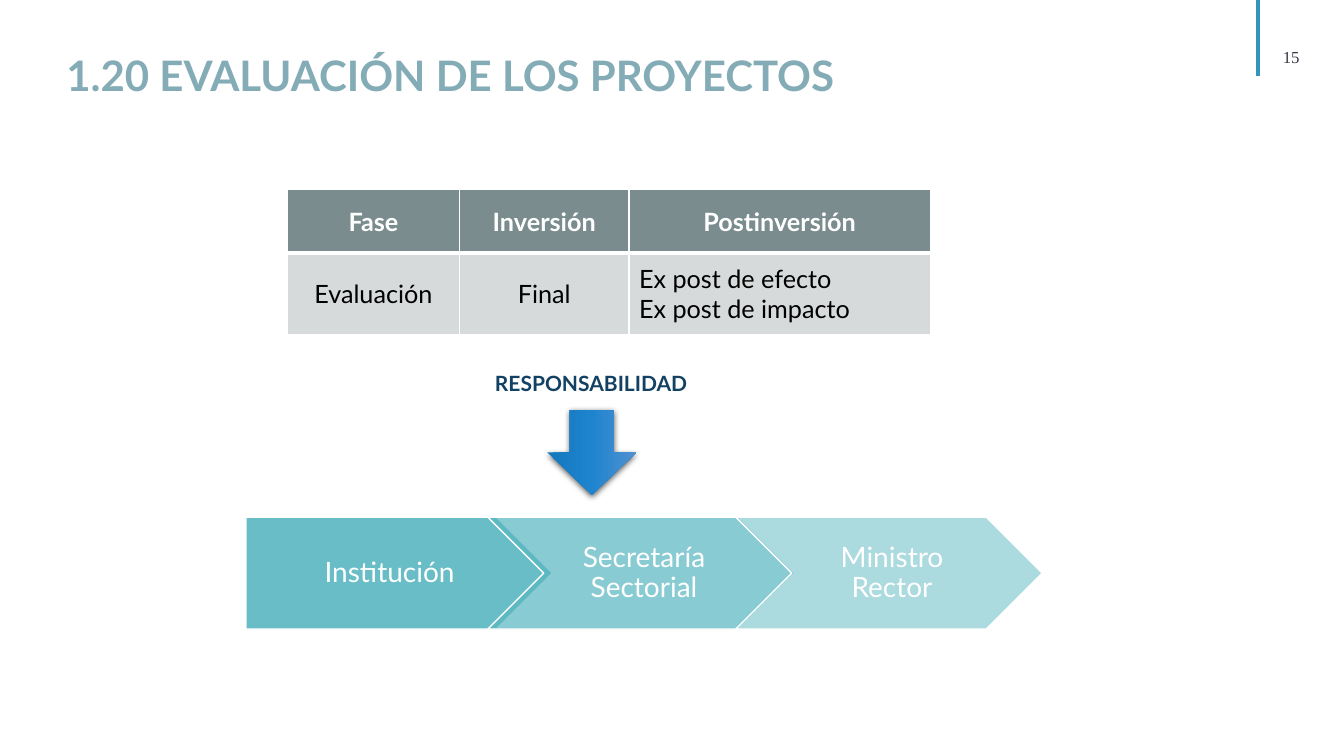
import pptx
import pptx.dml.color
import pptx.enum.shapes
import pptx.enum.text
import pptx.oxml.ns
import pptx.util
from lxml import etree

Pt = pptx.util.Pt
SHAPE = pptx.enum.shapes.MSO_SHAPE
ALIGN = pptx.enum.text.PP_ALIGN
ANCHOR = pptx.enum.text.MSO_ANCHOR
qn = pptx.oxml.ns.qn

COLOURS = {
    "title": "84ACB6", "number": "373545", "rule": "3494BA",
    "header": "7A8C8E", "body": "D7DADB", "step": "58B6C0",
    "label": "134163", "white": "FFFFFF", "black": "000000",
    "arrow_dark": "1477BE", "arrow_mid": "1E84CE", "arrow_light": "5191D0",
}


def rgb(name):
    return pptx.dml.color.RGBColor.from_string(COLOURS[name])


def add_colour(parent, name, alpha=None):
    colour = etree.SubElement(parent, qn("a:srgbClr"), val=COLOURS[name])
    if alpha is not None:
        etree.SubElement(colour, qn("a:alpha"), val=str(alpha * 1000))


def write(frame, lines, size, colour, bold=False, align=ALIGN.LEFT,
          font="Lato", spacing=None):
    frame.word_wrap = True
    for index, line in enumerate(lines):
        para = frame.paragraphs[0] if index == 0 else frame.add_paragraph()
        para.alignment = align
        if spacing:
            para.line_spacing = spacing
        span = para.add_run()
        span.text = line
        span.font.name = font
        span.font.size = Pt(size)
        span.font.bold = bold
        span.font.color.rgb = rgb(colour)


def set_margins(frame, left, top, right, bottom):
    frame.margin_left, frame.margin_top = Pt(left), Pt(top)
    frame.margin_right, frame.margin_bottom = Pt(right), Pt(bottom)


def add_text(page, place, text, size, colour, margins=(7.2, 3.6, 7.2, 3.6),
             anchor=ANCHOR.TOP, **style):
    frame = page.shapes.add_textbox(*map(Pt, place)).text_frame
    set_margins(frame, *margins)
    frame.vertical_anchor = anchor
    write(frame, [text], size, colour, **style)


def add_rule(page, x, bottom):
    rule = page.shapes.add_connector(
        pptx.enum.shapes.MSO_CONNECTOR.STRAIGHT, Pt(x), Pt(0), Pt(x), Pt(bottom))
    rule.line.color.rgb = rgb("rule")
    rule.line.width = Pt(2.25)
    etree.SubElement(rule._element.spPr, qn("a:effectLst"))


def add_step(page, kind, left, text, alpha, left_margin):
    step = page.shapes.add_shape(kind, Pt(left), Pt(369.4), Pt(218.9), Pt(79.9))
    step.shadow.inherit = False
    step.fill.solid()
    step.fill.fore_color.rgb = rgb("step")
    fill_colour = step._element.spPr.find(qn("a:solidFill"))[0]
    etree.SubElement(fill_colour, qn("a:alpha"), val=str(alpha * 1000))
    step.line.color.rgb = rgb("white")
    step.line.width = Pt(1)
    set_margins(step.text_frame, left_margin, 4.3, 2.2, 4.3)
    step.text_frame.vertical_anchor = ANCHOR.MIDDLE
    write(step.text_frame, [text], 20, "white", align=ALIGN.CENTER, spacing=0.9)


def add_arrow(page, place):
    arrow = page.shapes.add_shape(SHAPE.DOWN_ARROW, *map(Pt, place))
    arrow.line.fill.background()
    # Left-to-right gradient
    arrow.fill.gradient()
    arrow.fill.gradient_angle = 0
    stops = arrow._element.spPr.find(qn("a:gradFill")).find(qn("a:gsLst"))
    for stop in list(stops):
        stops.remove(stop)
    for percent, name in ((0, "arrow_dark"), (50, "arrow_mid"), (100, "arrow_light")):
        stop = etree.SubElement(stops, qn("a:gs"), pos=str(percent * 1000))
        add_colour(stop, name)
    # Soft shadow below
    arrow.shadow.inherit = False
    effects = arrow._element.spPr.find(qn("a:effectLst"))
    shadow = etree.SubElement(
        effects, qn("a:outerShdw"), blurRad=str(Pt(4.5)), dist=str(Pt(1.5)),
        dir="5400000", algn="ctr", rotWithShape="0")
    add_colour(shadow, "black", 63)


def add_borders(cell, widths):
    properties = cell._tc.get_or_add_tcPr()
    for side, width in widths.items():
        border = etree.SubElement(properties, qn("a:ln" + side), w=str(Pt(width)))
        add_colour(etree.SubElement(border, qn("a:solidFill")), "white")


def add_phase_table(page, rows, place, widths, heights):
    table = page.shapes.add_table(len(rows), len(widths), *map(Pt, place)).table
    for column, width in zip(table.columns, widths):
        column.width = Pt(width)
    for row, height in zip(table.rows, heights):
        row.height = Pt(height)
    for r, row in enumerate(rows):
        header = r == 0
        for c, lines in enumerate(row):
            cell = table.cell(r, c)
            add_borders(cell, {"L": 1, "R": 1, "T": 1 if header else 3,
                               "B": 3 if header else 1})
            cell.fill.solid()
            cell.fill.fore_color.rgb = rgb("header" if header else "body")
            cell.vertical_anchor = ANCHOR.MIDDLE
            write(cell.text_frame, lines, 18, "white" if header else "black",
                  bold=header,
                  align=ALIGN.CENTER if len(lines) == 1 else ALIGN.LEFT)


def main():
    deck = pptx.Presentation()
    deck.slide_width, deck.slide_height = Pt(960), Pt(540)
    page = deck.slides.add_slide(deck.slide_layouts[6])

    # Page number and title
    add_text(page, (893.5, 33.1, 57.6, 14.4), "15", 12, "number",
             margins=(7.2, 0, 7.2, 0), align=ALIGN.CENTER, font="Times New Roman")
    add_rule(page, 898.6, 54)
    add_text(page, (40.3, 31.7, 592.6, 43.9), "1.20 EVALUACIÓN DE LOS PROYECTOS",
             30, "title", bold=True)

    # Chain of responsibility
    add_step(page, SHAPE.PENTAGON, 175.7, "Institución", 90, 8.6)
    add_step(page, SHAPE.CHEVRON, 348.5, "Secretaría Sectorial", 70, 6.5)
    add_step(page, SHAPE.CHEVRON, 525.6, "Ministro Rector", 50, 6.5)

    # Evaluation by phase
    rows = [
        [["Fase"], ["Inversión"], ["Postinversión"]],
        [["Evaluación"], ["Final"], ["Ex post de efecto", "Ex post de impacto"]],
    ]
    add_phase_table(page, rows, (205.2, 135.4, 459.4, 103.7),
                    (123.1, 121, 215.3), (45.4, 58.3))

    # Label and arrow to the chain
    add_arrow(page, (391, 293, 63.4, 60.5))
    add_text(page, (336.2, 252, 172.1, 46.1), "RESPONSABILIDAD", 15, "label",
             margins=(8.6,) * 4, anchor=ANCHOR.MIDDLE, bold=True,
             align=ALIGN.CENTER, spacing=0.9)

    deck.save("out.pptx")


if __name__ == "__main__":
    main()
